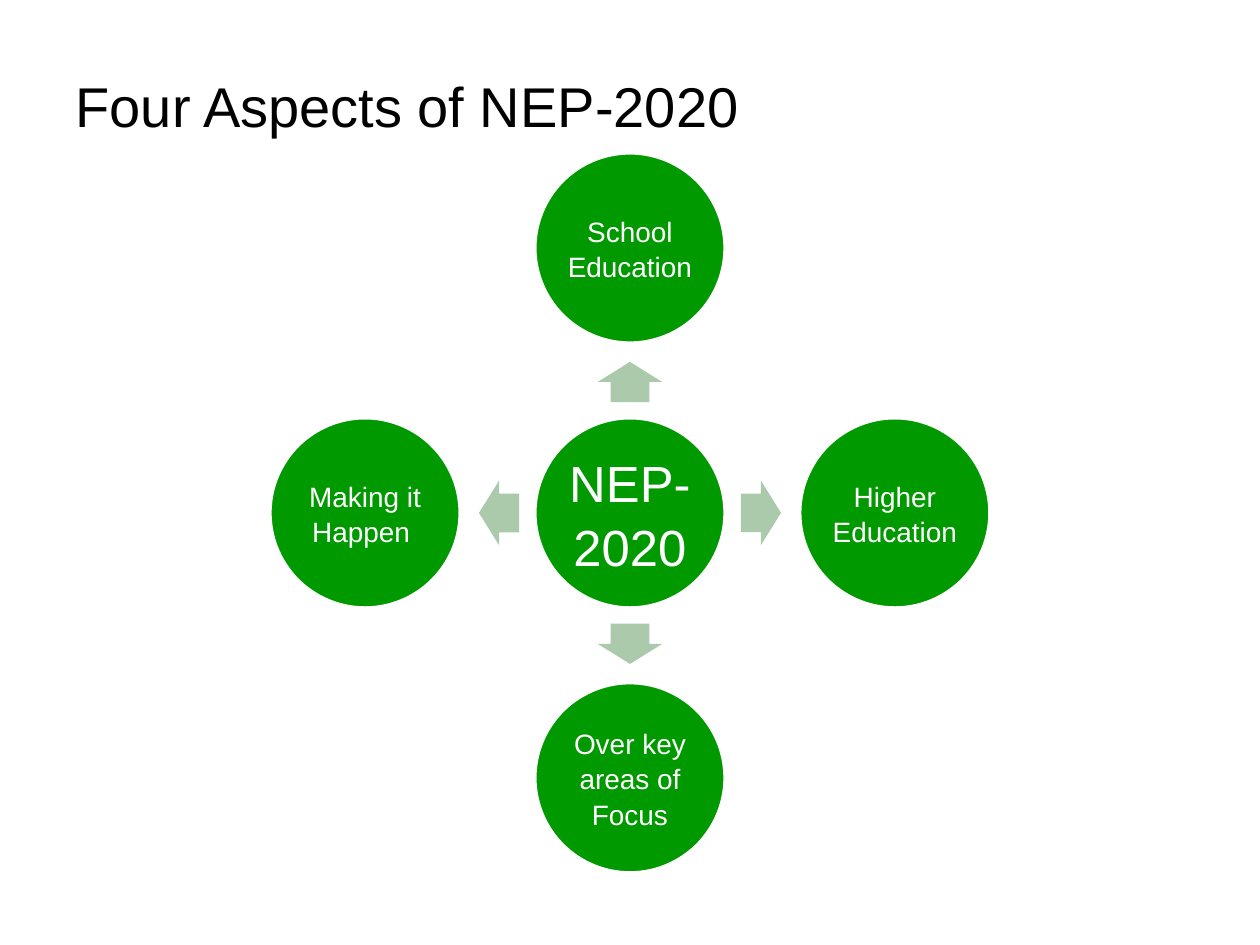
"""Build the slide showing the four aspects of NEP-2020 around a hub."""
from math import cos, radians, sin

from pptx import Presentation
from pptx.dml.color import RGBColor
from pptx.enum.shapes import MSO_SHAPE
from pptx.enum.text import MSO_ANCHOR, PP_ALIGN
from pptx.util import Cm, Pt

OVAL, ARROW = MSO_SHAPE.OVAL, MSO_SHAPE.RIGHT_ARROW
TOP, MIDDLE = MSO_ANCHOR.TOP, MSO_ANCHOR.MIDDLE
LEFT, CENTER = PP_ALIGN.LEFT, PP_ALIGN.CENTER

BLACK = RGBColor(0x00, 0x00, 0x00)
WHITE = RGBColor(0xFF, 0xFF, 0xFF)
GREEN = RGBColor(0x00, 0x99, 0x00)
PALE_GREEN = RGBColor(0xAB, 0xCA, 0xAB)

FONT = "Arial"
TITLE_ONLY = 5
HUB_X, HUB_Y = 12.7, 10.34
CIRCLE_SIZE = 3.8
CIRCLE_DISTANCE = 5.34
ARROW_LENGTH, ARROW_WIDTH = 0.81, 1.3
ARROW_DISTANCE = 2.64
ASPECTS = (
    (270, "School Education "),
    (0, "Higher Education"),
    (90, "Over key areas of Focus"),
    (180, "Making it Happen "),
)


def write_text(frame, text, size, color, alignment):
    """Put one formatted paragraph into a text frame."""
    frame.word_wrap = True
    frame.text = text
    para = frame.paragraphs[0]
    para.alignment = alignment
    para.space_before = Pt(0)
    font = para.runs[0].font
    font.name, font.size, font.color.rgb = FONT, Pt(size), color
    return para


def add_title(page, text):
    """Fill the title placeholder and place it."""
    title = page.shapes.title
    title.left, title.top = Cm(1.27), Cm(1.32)
    title.width, title.height = Cm(22.86), Cm(16.89)
    title.text_frame.vertical_anchor = TOP
    write_text(title.text_frame, text, 32, BLACK, LEFT)


def add_centered(diagram, kind, x, y, width, height, color):
    """Add a filled shape around a centre point."""
    shape = diagram.shapes.add_shape(
        kind, Cm(x - width / 2), Cm(y - height / 2), Cm(width), Cm(height))
    shape.shadow.inherit = False
    shape.fill.solid()
    shape.fill.fore_color.rgb = color
    return shape


def add_circle(diagram, x, y, text, size, inset):
    """Add a green circle with centred white text."""
    circle = add_centered(diagram, OVAL, x, y, CIRCLE_SIZE, CIRCLE_SIZE, GREEN)
    circle.line.color.rgb = WHITE
    circle.line.width = Pt(1)
    frame = circle.text_frame
    frame.vertical_anchor = MIDDLE
    frame.margin_left = frame.margin_right = Cm(inset)
    frame.margin_top = frame.margin_bottom = Cm(inset)
    para = write_text(frame, text, size, WHITE, CENTER)
    para.line_spacing = 1.05


def add_arrow(diagram, x, y, angle):
    """Add a pale block arrow turned to an angle."""
    arrow = add_centered(diagram, ARROW, x, y, ARROW_LENGTH, ARROW_WIDTH, PALE_GREEN)
    arrow.adjustments[0] = 0.6
    arrow.adjustments[1] = 0.5
    arrow.line.fill.background()
    arrow.rotation = angle


def from_hub(angle, distance):
    """Return the point at an angle and distance from the hub."""
    turn = radians(angle)
    return HUB_X + distance * cos(turn), HUB_Y + distance * sin(turn)


def main():
    """Create the deck and save it."""
    deck = Presentation()
    deck.slide_width, deck.slide_height = Cm(25.4), Cm(19.05)
    page = deck.slides.add_slide(deck.slide_layouts[TITLE_ONLY])
    add_title(page, "Four Aspects of NEP-2020")
    diagram = page.shapes.add_group_shape()
    add_circle(diagram, HUB_X, HUB_Y, "NEP-2020", 29, 0.1)
    for angle, aspect in ASPECTS:
        add_arrow(diagram, *from_hub(angle, ARROW_DISTANCE), angle)
        add_circle(diagram, *from_hub(angle, CIRCLE_DISTANCE), aspect, 16, 0.05)
    deck.save("out.pptx")


if __name__ == "__main__":
    main()
